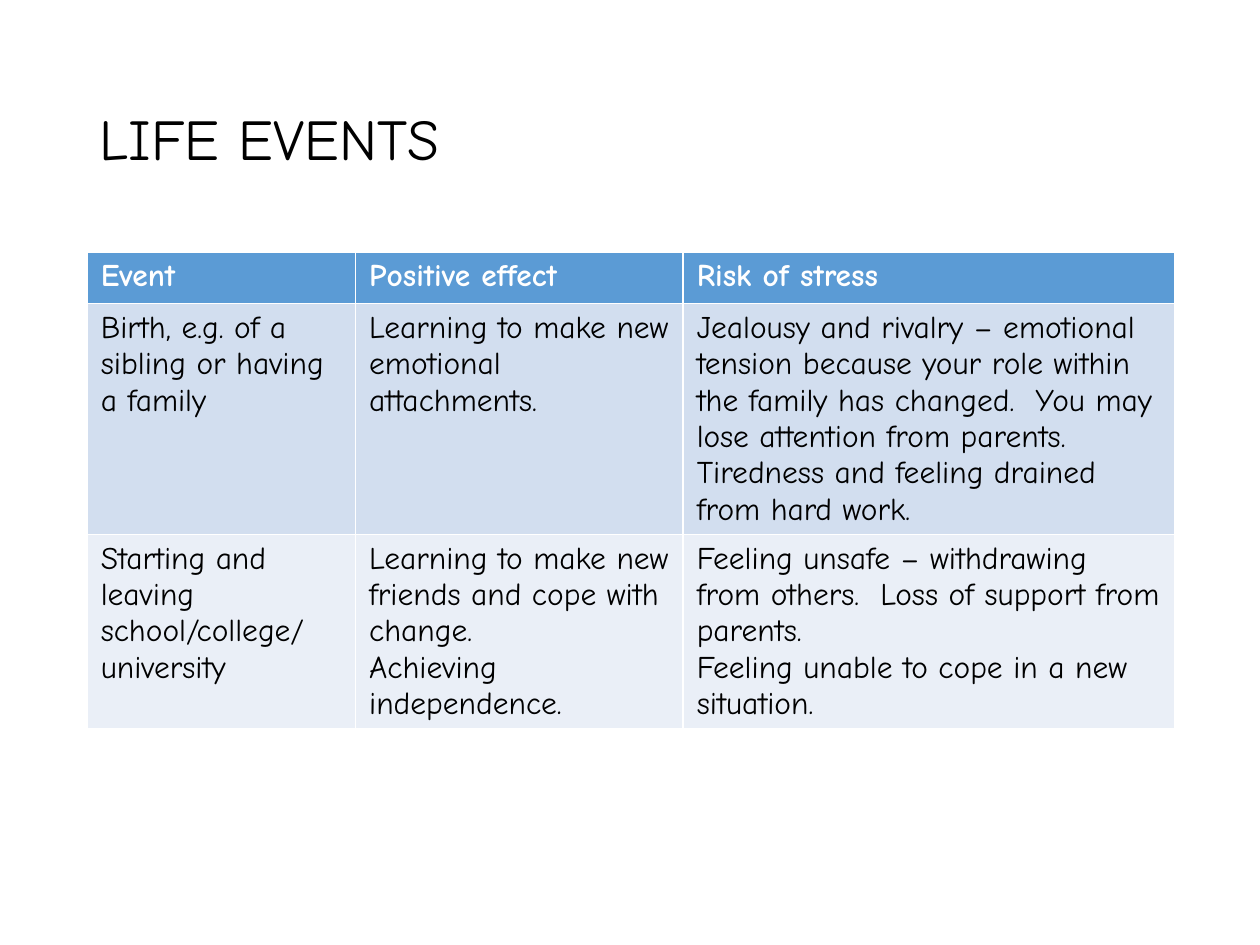
import pptx
import pptx.util
import pptx.dml.color
import pptx.enum.text

Inches = pptx.util.Inches
Pt = pptx.util.Pt
Align = pptx.enum.text.PP_ALIGN
Anchor = pptx.enum.text.MSO_ANCHOR
Fit = pptx.enum.text.MSO_AUTO_SIZE

COLORS = {
    "ink": "000000",
    "paper": "FFFFFF",
    "head": "5B9BD5",
    "odd": "D2DEEF",
    "even": "EAEFF7",
}
FONT = "Comic Neue"
WIDTHS = (2.13, 2.6, 3.9)
ROWS = (
    ("Event", "Positive effect", "Risk of stress"),
    (
        "Birth, e.g. of a sibling or having a family",
        "Learning to make new emotional attachments.",
        "Jealousy and rivalry – emotional tension because your role within "
        "the family has changed.  You may lose attention from parents.\n"
        "Tiredness and feeling drained from hard work.",
    ),
    (
        "Starting and leaving school/college/\nuniversity",
        "Learning to make new friends and cope with change.\n"
        "Achieving independence.",
        "Feeling unsafe – withdrawing from others.  Loss of support from parents.\n"
        "Feeling unable to cope in a new situation.",
    ),
)


def color(name):
    return pptx.dml.color.RGBColor.from_string(COLORS[name])


def apply(item, values):
    for key, value in values.items():
        setattr(item, key, value)


def write(frame, text, size, ink, bold=False):
    frame.text = text
    for para in frame.paragraphs:
        para.alignment = Align.LEFT
        for run in para.runs:
            apply(run.font, {"name": FONT, "size": Pt(size), "bold": bold})
            run.font.color.rgb = color(ink)


def add_title(slide, box):
    title = slide.shapes.title
    apply(title, dict(zip(("left", "top", "width", "height"), box)))
    frame = title.text_frame
    write(frame, "LIFE EVENTS", 33, "ink")
    apply(frame, {
        "vertical_anchor": Anchor.MIDDLE,
        "auto_size": Fit.NONE,
        "word_wrap": True,
    })
    frame.paragraphs[0].line_spacing = 0.9


def add_events(slide, box):
    holder = slide.shapes.add_table(len(ROWS), len(WIDTHS), *box)
    table = holder.table
    for column, width in zip(table.columns, WIDTHS):
        column.width = Inches(width)
    fills = ("head", "odd", "even")
    for index, (texts, fill) in enumerate(zip(ROWS, fills)):
        table.rows[index].height = Inches(0.41)
        head = index == 0
        for cell, text in zip(table.rows[index].cells, texts):
            cell.fill.solid()
            cell.fill.fore_color.rgb = color(fill)
            apply(cell, {
                "margin_left": Inches(0.11),
                "margin_right": Inches(0.11),
                "margin_top": Inches(0.05),
                "margin_bottom": Inches(0.05),
            })
            write(cell.text_frame, text, 18, "paper" if head else "ink", head)
    holder.height = box[3]


def main():
    deck = pptx.Presentation()
    apply(deck, {"slide_width": Inches(10), "slide_height": Inches(7.5)})
    slide = deck.slides.add_slide(deck.slide_layouts[5])
    left, width = Inches(0.69), Inches(8.62)
    add_title(slide, (left, Inches(0.4), width, Inches(1.45)))
    add_events(slide, (left, Inches(2), width, Inches(2.86)))
    deck.save("out.pptx")


if __name__ == "__main__":
    main()
